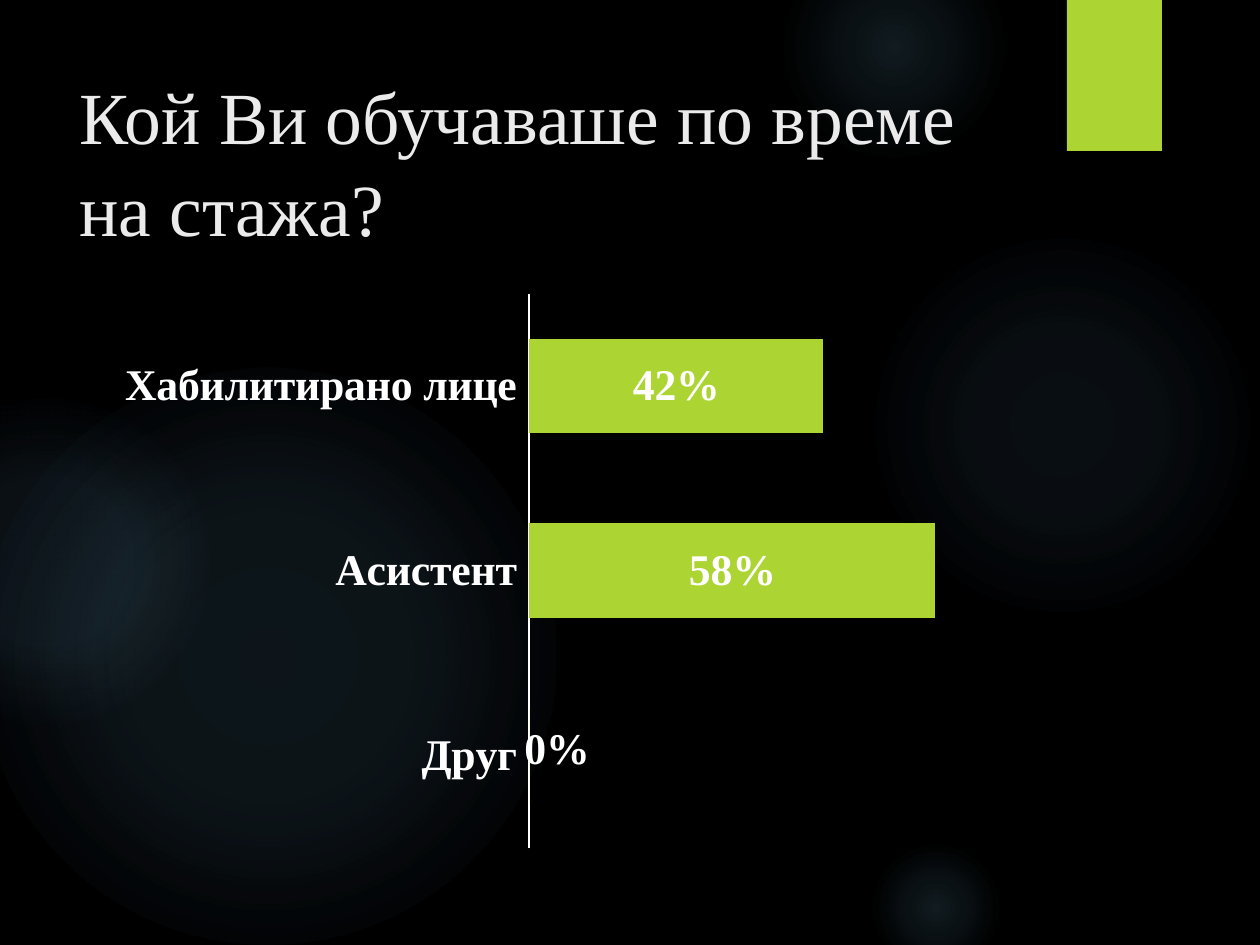
from lxml import etree
from pptx import Presentation
from pptx.chart.data import CategoryChartData
from pptx.dml.color import RGBColor
from pptx.enum.chart import XL_CHART_TYPE, XL_LABEL_POSITION, XL_TICK_LABEL_POSITION, XL_TICK_MARK
from pptx.enum.shapes import MSO_SHAPE
from pptx.enum.text import MSO_ANCHOR
from pptx.oxml import parse_xml
from pptx.oxml.ns import nsdecls, qn
from pptx.util import Emu, Pt

BAR_STACKED = XL_CHART_TYPE.BAR_STACKED
CENTER = XL_LABEL_POSITION.CENTER
LABELS_LOW = XL_TICK_LABEL_POSITION.LOW
NO_TICK = XL_TICK_MARK.NONE
OVAL, RECTANGLE = MSO_SHAPE.OVAL, MSO_SHAPE.RECTANGLE
MIDDLE = MSO_ANCHOR.MIDDLE

EMU_PER_PX = 914400 / 126
SERIF = "Times New Roman"
COLORS = {
    "background": "000000",
    "glow": "7AC4F0",
    "accent": "ACD433",
    "title": "EBEBEB",
    "chart_text": "FFFFFF",
    "shadow": "000000",
}
# left, top, diameter, then (stop, opacity) pairs in percent
GLOWS = [
    (868, 231, 388, [(0, 7), (36, 6), (69, 0)]),
    (784, -63, 220, [(0, 14), (36, 7), (73, 0)]),
    (868, 840, 136, [(0, 14), (36, 7), (66, 0)]),
    (-21, 368, 577, [(0, 11), (36, 10), (75, 0)]),
    (-116, 399, 325, [(0, 8), (36, 8), (72, 0)]),
]
ANSWERS = {"Друг": 0, "Асистент": 0.58, "Хабилитирано лице": 0.42}


def px(length):
    return Emu(round(length * EMU_PER_PX))


def color(name):
    return RGBColor.from_string(COLORS[name])


def style_font(font, size, color_name, bold=False):
    font.name = SERIF
    font.size = Pt(size)
    font.bold = bold
    font.color.rgb = color(color_name)


def add_glow(slide, left, top, diameter, stops):
    """Add a circle that fades out from its centre."""
    glow = slide.shapes.add_shape(OVAL, px(left), px(top), px(diameter), px(diameter))
    glow.shadow.inherit = False
    glow.line.fill.background()
    stop_xml = "".join(
        f'<a:gs pos="{stop * 1000}"><a:srgbClr val="{COLORS["glow"]}">'
        f'<a:alpha val="{opacity * 1000}"/></a:srgbClr></a:gs>'
        for stop, opacity in stops
    )
    gradient = parse_xml(
        f'<a:gradFill {nsdecls("a")} rotWithShape="1"><a:gsLst>{stop_xml}</a:gsLst>'
        '<a:path path="circle">'
        '<a:fillToRect l="50000" t="50000" r="50000" b="50000"/></a:path></a:gradFill>'
    )
    glow._element.spPr.find(qn("a:prstGeom")).addnext(gradient)


def add_accent_tab(slide):
    tab = slide.shapes.add_shape(RECTANGLE, px(1067), px(0), px(95), px(151))
    tab.fill.solid()
    tab.fill.fore_color.rgb = color("accent")
    tab.line.fill.background()
    tab.shadow.inherit = False
    effects = tab._element.spPr.find(qn("a:effectLst"))
    effects.append(parse_xml(
        f'<a:outerShdw {nsdecls("a")} blurRad="{Pt(3)}" dist="{Pt(2)}" dir="5400000" '
        f'rotWithShape="0"><a:srgbClr val="{COLORS["shadow"]}">'
        '<a:alpha val="45000"/></a:srgbClr></a:outerShdw>'
    ))


def add_title(slide, text):
    box = slide.shapes.add_textbox(px(67), px(63), px(973), px(193))
    frame = box.text_frame
    frame.word_wrap = True
    frame.vertical_anchor = MIDDLE
    para = frame.paragraphs[0]
    para.text = text
    para.line_spacing = 1.04
    style_font(para.font, 42, "title")


def make_layout(**values):
    """Build a manual chart layout from fractions of the chart's size."""
    layout = etree.Element(qn("c:layout"))
    manual = etree.SubElement(layout, qn("c:manualLayout"))
    for tag, value in values.items():
        etree.SubElement(manual, qn(f"c:{tag}"), val=str(value))
    return layout


def set_plot_layout(chart):
    area = chart._chartSpace.chart.plotArea
    for layout in area.findall(qn("c:layout")):
        area.remove(layout)
    area.insert(0, make_layout(layoutTarget="inner", xMode="edge", yMode="edge",
                               x=0.45, y=0.02, w=0.53, h=0.96))


def style_axes(chart):
    categories = chart.category_axis
    categories.major_tick_mark = categories.minor_tick_mark = NO_TICK
    categories.tick_label_position = LABELS_LOW
    categories.has_major_gridlines = False
    categories.format.line.color.rgb = color("chart_text")
    categories.format.line.width = Pt(1)
    style_font(categories.tick_labels.font, 25, "chart_text", bold=True)
    values = chart.value_axis
    values.minimum_scale, values.maximum_scale = 0, 0.7
    values.has_major_gridlines = False
    values.visible = False


def style_bars(plot):
    plot.gap_width = 95
    plot.overlap = 100
    plot.vary_by_categories = False
    series = plot.series[0]
    series.format.fill.solid()
    series.format.fill.fore_color.rgb = color("accent")
    labels = series.data_labels
    labels.show_value = True
    labels.number_format = "0%"
    labels.number_format_is_linked = False
    labels.position = CENTER
    style_font(labels.font, 25, "chart_text", bold=True)
    # The zero bar has no width, so its label moves clear of the axis.
    zero_label = series.points[0].data_label
    style_font(zero_label.font, 25, "chart_text", bold=True)
    zero_label.position = CENTER
    label_index = series._element.find(".//" + qn("c:dLbl")).find(qn("c:idx"))
    label_index.addnext(make_layout(x=0.03, y=-0.01))


def add_answer_chart(slide):
    data = CategoryChartData(number_format="0%")
    data.categories = list(ANSWERS)
    data.add_series("Series 1", list(ANSWERS.values()))
    chart = slide.shapes.add_chart(
        BAR_STACKED, px(113), px(282), px(925), px(578), data).chart
    chart.has_legend = False
    chart.has_title = False
    style_font(chart.font, 18, "chart_text")
    chart.font.name = "League Spartan"
    set_plot_layout(chart)
    style_axes(chart)
    style_bars(chart.plots[0])


def main():
    deck = Presentation()
    deck.slide_width, deck.slide_height = px(1260), px(945)
    slide = deck.slides.add_slide(deck.slide_layouts[6])
    slide.background.fill.solid()
    slide.background.fill.fore_color.rgb = color("background")
    for glow in GLOWS:
        add_glow(slide, *glow)
    add_accent_tab(slide)
    add_title(slide, "Кой Ви обучаваше по време на стажа?")
    add_answer_chart(slide)
    deck.save("out.pptx")


if __name__ == "__main__":
    main()
